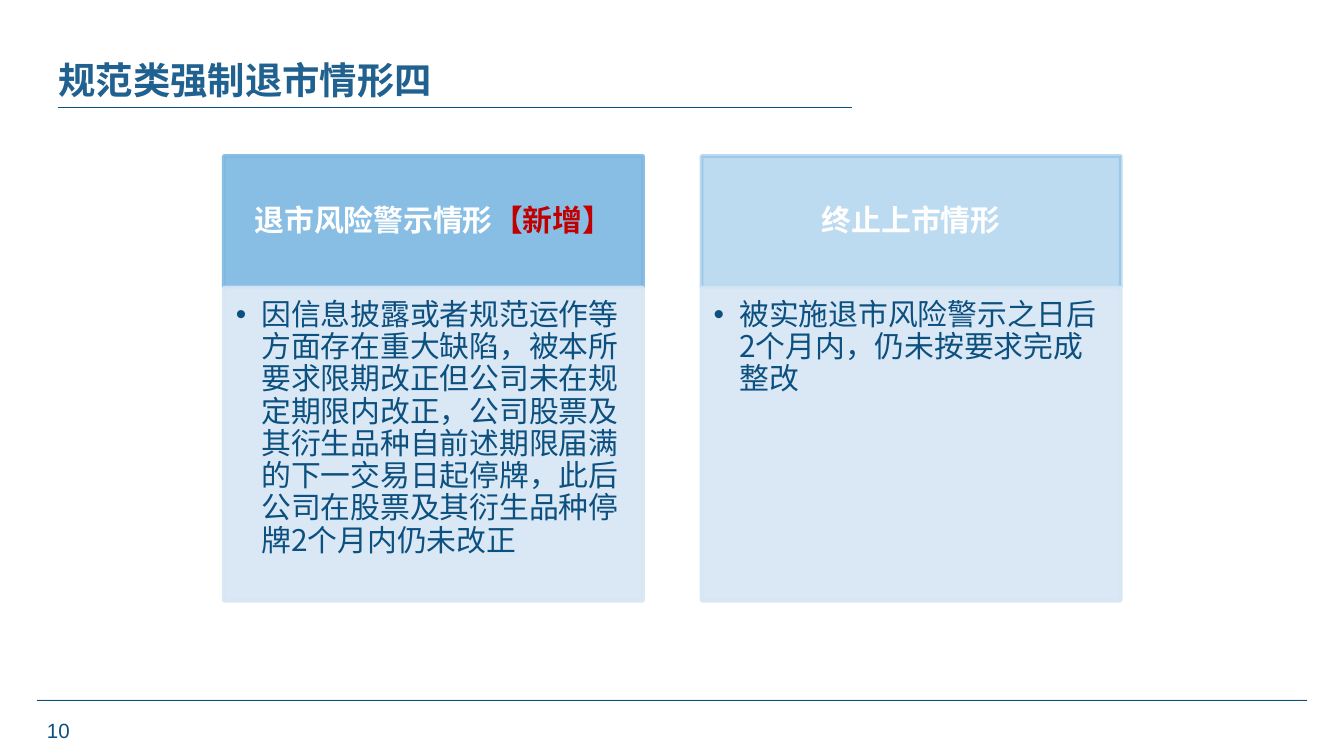
from lxml.etree import SubElement
from pptx import Presentation
from pptx.dml.color import RGBColor
from pptx.enum.shapes import MSO_CONNECTOR as Connector, MSO_SHAPE as Shape
from pptx.enum.text import MSO_ANCHOR as Anchor, PP_ALIGN as Align
from pptx.oxml.ns import qn
from pptx.util import Inches, Pt

NAVY = RGBColor(0x0C, 0x50, 0x7F)
TITLE_BLUE = RGBColor(0x20, 0x61, 0x8F)
SKY = RGBColor(0x7D, 0xB8, 0xE2)
PALE = RGBColor(0xD7, 0xE6, 0xF4)
RED = RGBColor(0xC0, 0x00, 0x00)
WHITE = RGBColor(0xFF, 0xFF, 0xFF)
CJK = "Noto Sans CJK SC"

CARD_LEFT, CARD_STEP, CARD_WIDTH = 16.65, 35.55, 31.2
HEAD_TOP, HEAD_HEIGHT, BODY_HEIGHT = 11.6, 9.8, 23.3


def add_span(para, text, size=16, font=CJK, color=NAVY, bold=False):
    span = para.add_run()
    span.text = text
    span.font.size = Pt(size)
    span.font.bold = bold
    span.font.color.rgb = color
    span.font.name = font
    SubElement(span.font._element, qn("a:ea"), typeface=font)


def set_alpha(color, percent):
    SubElement(color, qn("a:alpha"), val=str(percent * 1000))


class SlideBuilder:
    """Places elements on a grid of tenths of an inch."""

    def __init__(self, columns, rows):
        self.deck = Presentation()
        self.deck.slide_width = self.cell(columns)
        self.deck.slide_height = self.cell(rows)
        self.page = self.deck.slides.add_slide(self.deck.slide_layouts[6])

    def cell(self, count):
        return Inches(count / 10)

    def place(self, *counts):
        return [self.cell(count) for count in counts]

    def rule(self, left, right, row):
        line = self.page.shapes.add_connector(
            Connector.STRAIGHT, *self.place(left, row, right, row))
        line.line.color.rgb = NAVY
        line.line.width = Pt(0.5)
        effects = SubElement(line._element.spPr, qn("a:effectLst"))
        shadow = SubElement(effects, qn("a:outerShdw"), blurRad="0", dist="0", dir="0")
        set_alpha(SubElement(shadow, qn("a:srgbClr"), val=str(SKY)), 50)

    def label(self, text, area, anchor=Anchor.TOP, align=Align.LEFT, **style):
        frame = self.page.shapes.add_textbox(*self.place(*area)).text_frame
        frame.word_wrap = True
        frame.vertical_anchor = anchor
        para = frame.paragraphs[0]
        para.alignment = align
        add_span(para, text, **style)

    def panel(self, area, color, opacity, insets, anchor, align):
        box = self.page.shapes.add_shape(Shape.RECTANGLE, *self.place(*area))
        box.shadow.inherit = False
        box.fill.solid()
        box.fill.fore_color.rgb = color
        box.line.color.rgb = color
        box.line.width = Pt(2)
        for fill in (box.fill, box.line.fill):
            set_alpha(fill.fore_color._xFill.find(qn("a:srgbClr")), opacity)
        frame = box.text_frame
        frame.word_wrap = True
        frame.vertical_anchor = anchor
        (frame.margin_left, frame.margin_top,
         frame.margin_right, frame.margin_bottom) = map(Inches, insets)
        para = frame.paragraphs[0]
        para.alignment = align
        para.line_spacing = 0.9
        return para

    def card(self, index, heading, body, opacity):
        left = CARD_LEFT + index * CARD_STEP
        para = self.panel((left, HEAD_TOP, CARD_WIDTH, HEAD_HEIGHT), SKY, opacity,
                          (0.12, 0.07, 0.12, 0.07), Anchor.MIDDLE, Align.CENTER)
        for text, color in heading:
            add_span(para, text, color=color, bold=True)

        para = self.panel((left, HEAD_TOP + HEAD_HEIGHT, CARD_WIDTH, BODY_HEIGHT), PALE, 90,
                          (0.09, 0.09, 0.12, 0.14), Anchor.TOP, Align.LEFT)
        properties = para._p.get_or_add_pPr()
        properties.set("marL", str(Inches(0.19)))
        properties.set("indent", str(Inches(-0.19)))
        SubElement(properties, qn("a:buFont"), typeface="Arial")
        SubElement(properties, qn("a:buChar"), char="•")
        add_span(para, body)


def main():
    slide = SlideBuilder(100, 56.25)
    slide.rule(2.75, 97.25, 52.1)
    slide.rule(4.3, 63.4, 8)
    slide.label("10", (2, 52.9, 4.7, 2.4), align=Align.CENTER, size=11, font="Arial")
    slide.label("规范类强制退市情形四", (3.35, 3.75, 63.8, 4.4), anchor=Anchor.MIDDLE,
                size=20, color=TITLE_BLUE, bold=True)
    cards = [
        ([("退市风险警示情形", WHITE), ("【新增】", RED)],
         "因信息披露或者规范运作等方面存在重大缺陷，被本所要求限期改正但公司未在规定期限内改正，"
         "公司股票及其衍生品种自前述期限届满的下一交易日起停牌，"
         "此后公司在股票及其衍生品种停牌2个月内仍未改正", 90),
        ([("终止上市情形", WHITE)],
         "被实施退市风险警示之日后2个月内，仍未按要求完成整改", 50),
    ]
    for index, card in enumerate(cards):
        slide.card(index, *card)
    slide.deck.save("out.pptx")


if __name__ == "__main__":
    main()
